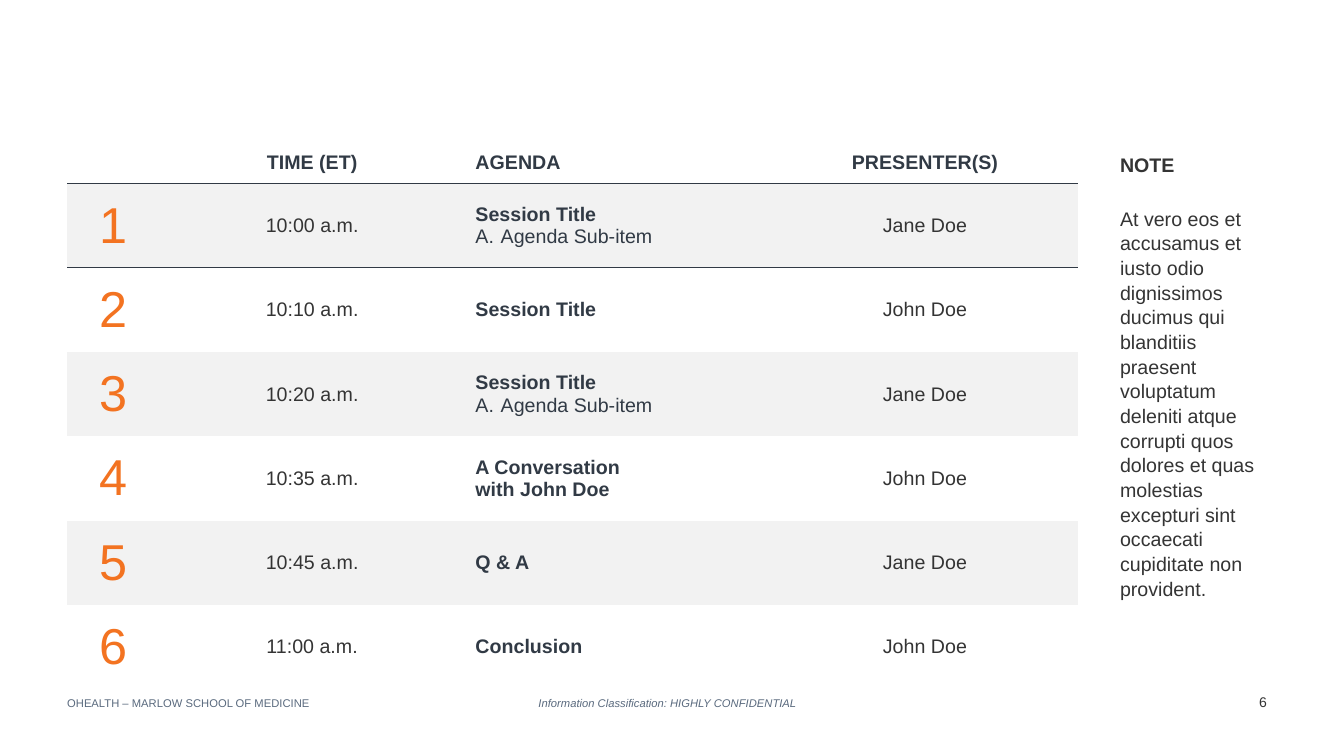
"""Build the meeting agenda slide with its side note and footer."""
import dataclasses

import lxml.etree
import pptx
import pptx.dml.color
import pptx.enum.text
import pptx.oxml.ns
import pptx.util

ALIGN = pptx.enum.text.PP_ALIGN
ANCHOR = pptx.enum.text.MSO_ANCHOR
SLIDE_W, SLIDE_H = 13.33, 7.5
NO_STYLE = "{2D5ABB26-0587-4C30-8999-92F81FD0307C}"


@dataclasses.dataclass(frozen=True)
class Theme:
    font: str = "Arial"
    ink: str = "343434"
    navy: str = "313A45"
    accent: str = "F37321"
    muted: str = "5A6A7E"
    band: str = "F2F2F2"
    body: int = 14
    number: int = 36
    footer: int = 8
    page: int = 10


THEME = Theme()
COLS = (6.83, 22.8, 22.8, 22.8)
ROWS = (10,) + (11.15,) * 6
HEADERS = ("", "TIME (ET)", "AGENDA", "PRESENTER(S)")
COL_ALIGN = (ALIGN.CENTER, ALIGN.CENTER, ALIGN.LEFT, ALIGN.CENTER)
AGENDA = (
    ("10:00 a.m.", "Session Title\nAgenda Sub-item", "Jane Doe"),
    ("10:10 a.m.", "Session Title", "John Doe"),
    ("10:20 a.m.", "Session Title\nAgenda Sub-item", "Jane Doe"),
    ("10:35 a.m.", "A Conversation\vwith John Doe", "John Doe"),
    ("10:45 a.m.", "Q & A", "Jane Doe"),
    ("11:00 a.m.", "Conclusion", "John Doe"),
)
NOTE = ("At vero eos et accusamus et iusto odio dignissimos ducimus qui "
        "blanditiis praesent voluptatum deleniti atque corrupti quos dolores "
        "et quas molestias excepturi sint occaecati cupiditate non provident.")


def across(share):
    """Return a percentage of the slide width."""
    return pptx.util.Inches(SLIDE_W * share / 100)


def down(share):
    """Return a percentage of the slide height."""
    return pptx.util.Inches(SLIDE_H * share / 100)


def rgb(color):
    """Return a colour object for a hex string."""
    return pptx.dml.color.RGBColor.from_string(color)


def style(p, size, color, bold=False, italic=False, align=ALIGN.LEFT):
    """Format a paragraph and all its runs."""
    p.alignment = align
    for r in p.runs:
        r.font.name, r.font.size = THEME.font, pptx.util.Pt(size)
        r.font.bold, r.font.italic = bold, italic
        r.font.color.rgb = rgb(color)


def add_text(s, box, text, size, color, spacing=1.0, **look):
    """Add a wrapping text box placed in slide percentages."""
    x, y, w, h = box
    sp = s.shapes.add_textbox(across(x), down(y), across(w), down(h))
    tf = sp.text_frame
    tf.word_wrap = True
    tf.text = text
    p = tf.paragraphs[0]
    p.line_spacing = spacing
    style(p, size, color, **look)
    return tf


def add_note(s, y, h, text, spacing=1.0, bold=False):
    """Add one block of the side note."""
    tf = add_text(s, (82.6, y, 12.4, h), text, THEME.body, THEME.ink,
                  spacing, bold=bold)
    tf.paragraphs[0].space_before = pptx.util.Pt(6)


def add_footer(s, box, text, size, color, **look):
    """Add a vertically centred footer item flush with its left edge."""
    tf = add_text(s, box, text, size, color, 0.95, **look)
    tf.vertical_anchor = ANCHOR.MIDDLE
    tf.margin_left = 0


def add_rule(cell, side):
    """Draw a thin line on one side of a cell."""
    qn = pptx.oxml.ns.qn
    ln = lxml.etree.Element(qn(f"a:{side}"), w=str(pptx.util.Pt(1)))
    fill = lxml.etree.SubElement(ln, qn("a:solidFill"))
    lxml.etree.SubElement(fill, qn("a:srgbClr"), val=THEME.navy)
    cell._tc.get_or_add_tcPr().insert(0, ln)


def add_letter(p):
    """Number a paragraph with capital letters."""
    pPr = p._p.get_or_add_pPr()
    indent = pptx.util.Inches(0.25)
    pPr.set("marL", str(indent))
    pPr.set("indent", str(-indent))
    lxml.etree.SubElement(pPr, pptx.oxml.ns.qn("a:buAutoNum"),
                          type="alphaUcPeriod")


def fill_cell(cell, row, col, text):
    """Write and format one agenda cell."""
    header = row == 0
    inset = pptx.util.Inches(0.1)
    cell.margin_left = cell.margin_right = cell.margin_bottom = inset
    cell.margin_top = 0 if header else inset
    cell.vertical_anchor = ANCHOR.BOTTOM if header else ANCHOR.MIDDLE
    if row % 2:
        cell.fill.solid()
        cell.fill.fore_color.rgb = rgb(THEME.band)
    else:
        cell.fill.background()
    cell.text_frame.text = text
    size = THEME.body if header or col else THEME.number
    color = (THEME.navy if header else
             (THEME.accent, THEME.ink, THEME.navy, THEME.ink)[col])
    for i, p in enumerate(cell.text_frame.paragraphs):
        bold = header or (col == 2 and i == 0)
        style(p, size, color, bold=bold, align=COL_ALIGN[col])
        if i:
            add_letter(p)
    if row < 2:
        add_rule(cell, "lnT" if row else "lnB")


def add_agenda(s):
    """Add the agenda table with numbered, banded rows."""
    sp = s.shapes.add_table(len(ROWS), len(COLS), across(5), down(14.27),
                            across(sum(COLS)), down(sum(ROWS)))
    sp.element.xpath(".//a:tableStyleId")[0].text = NO_STYLE
    table = sp.table
    table.first_row = table.horz_banding = False
    for column, share in zip(table.columns, COLS):
        column.width = across(share)
    for row, share in zip(table.rows, ROWS):
        row.height = down(share)
    lines = [HEADERS] + [(str(n), *item) for n, item in enumerate(AGENDA, 1)]
    for row, line in enumerate(lines):
        for col, text in enumerate(line):
            fill_cell(table.cell(row, col), row, col, text)


def main():
    """Build and save the slide."""
    prs = pptx.Presentation()
    prs.slide_width, prs.slide_height = across(100), down(100)
    s = prs.slides.add_slide(prs.slide_layouts[6])
    add_footer(s, (90.5, 90.5, 4.5, 5), "6", THEME.page, THEME.ink,
               align=ALIGN.RIGHT)
    add_footer(s, (33.3, 91.5, 33.5, 3.2),
               "Information Classification: HIGHLY CONFIDENTIAL",
               THEME.footer, THEME.muted, italic=True, align=ALIGN.CENTER)
    add_footer(s, (5, 91.5, 28.3, 3.2), "OHEALTH – MARLOW SCHOOL OF MEDICINE",
               THEME.footer, THEME.muted)
    add_note(s, 19.6, 4.4, "NOTE", bold=True)
    add_note(s, 26.5, 61.9, NOTE, spacing=1.05)
    add_agenda(s)
    prs.save("out.pptx")


if __name__ == "__main__":
    main()
